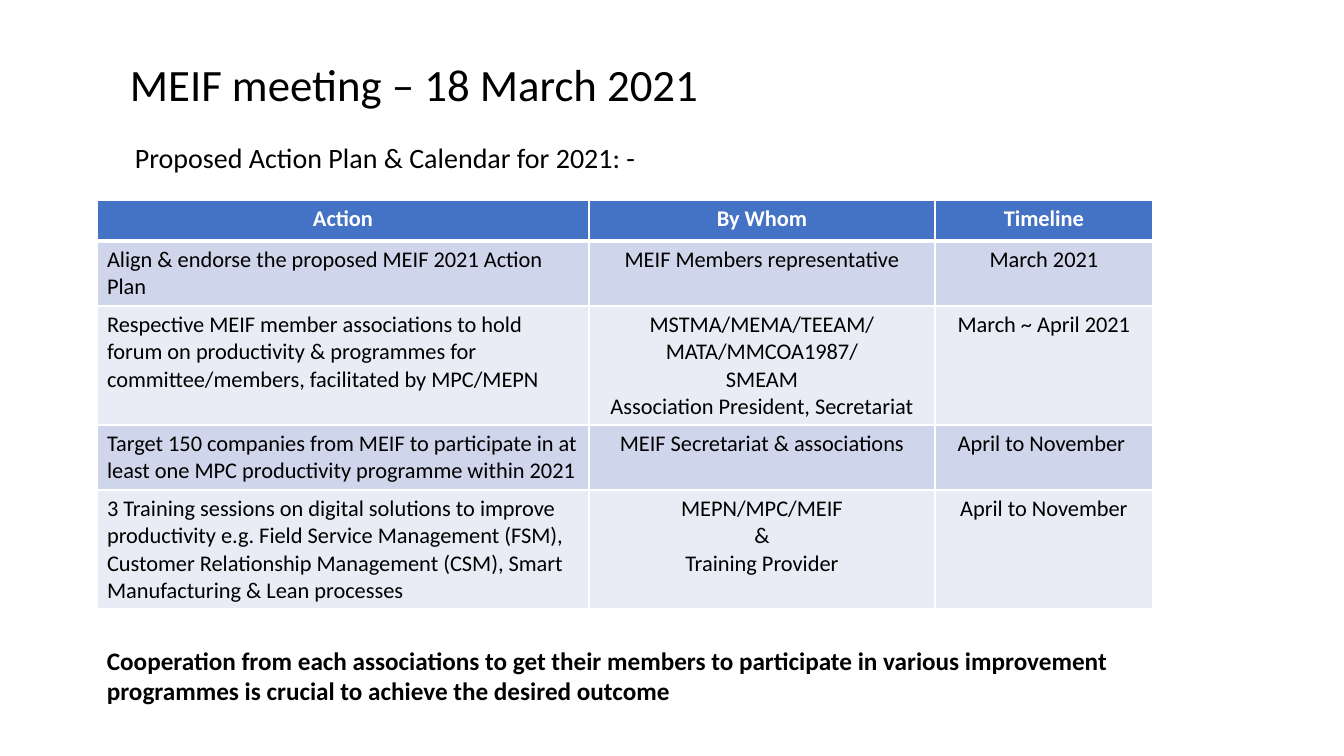
from lxml.etree import SubElement as Sub
from pptx import Presentation
from pptx.dml.color import RGBColor
from pptx.enum.text import MSO_ANCHOR as Anchor, PP_ALIGN as Align
from pptx.oxml.ns import qn
from pptx.util import Pt

TITLE = "MEIF meeting – 18 March 2021"
INTRO = "Proposed Action Plan & Calendar for 2021: -"
CLOSE = ("Cooperation from each associations to get their members to participate "
         "in various improvement programmes is crucial to achieve the desired outcome")
ROWS = [
    ("Action", "By Whom", "Timeline"),
    ("Align & endorse the proposed MEIF 2021 Action Plan",
     "MEIF Members representative", "March 2021"),
    ("Respective MEIF member associations to hold forum on productivity & "
     "programmes for committee/members, facilitated by MPC/MEPN",
     "MSTMA/MEMA/TEEAM/\nMATA/MMCOA1987/\nSMEAM\nAssociation President, Secretariat",
     "March ~ April 2021"),
    ("Target 150 companies from MEIF to participate in at least one MPC "
     "productivity programme within 2021",
     "MEIF Secretariat & associations", "April to November "),
    ("3 Training sessions on digital solutions to improve productivity e.g. "
     "Field Service Management (FSM), Customer Relationship Management (CSM), "
     "Smart Manufacturing & Lean processes",
     "MEPN/MPC/MEIF\n&\nTraining Provider", "April to November"),
]
WIDTHS = [492, 346, 218]
HEIGHTS = [41, 65, 119, 65, 119]
LEFT, TOP = 97, 200
BLACK, WHITE, HEAD = "000000", "FFFFFF", "4472C4"
BANDS = ["E9EBF5", "CFD5EA"]
BOXES = [
    (TITLE, (120, 51, 1008, 65), Anchor.BOTTOM, {"size": Pt(32)}, {"line_spacing": 0.9}),
    (INTRO, (125, 139, 1113, 579), Anchor.TOP, {"size": Pt(20)},
     {"line_spacing": 0.9, "space_before": Pt(10)}),
    (CLOSE, (LEFT, 640, sum(WIDTHS), 72), Anchor.TOP, {"size": Pt(18), "bold": True}, {}),
]


def px(n):
    return round(n * 914400 / 100.8)


def color(code):
    return RGBColor.from_string(code)


def assign(item, values):
    for key, value in values.items():
        setattr(item, key, value)


def write(frame, text, font, para, shade=BLACK):
    frame.text = text
    for line in frame.paragraphs:
        assign(line, para)
        for run in line.runs:
            assign(run.font, {"name": "Calibri", **font})
            run.font.color.rgb = color(shade)


def border(cell, base):
    props = cell._tc.get_or_add_tcPr()
    for side, size in (("L", 1), ("R", 1), ("T", 1), ("B", base)):
        line = Sub(props, qn(f"a:ln{side}"), w=str(Pt(size)))
        Sub(Sub(line, qn("a:solidFill")), qn("a:srgbClr"), val=WHITE)


deck = Presentation()
assign(deck, {"slide_width": px(1344), "slide_height": px(756)})
slide = deck.slides.add_slide(deck.slide_layouts[6])

for text, place, anchor, font, para in BOXES:
    frame = slide.shapes.add_textbox(*map(px, place)).text_frame
    assign(frame, {"word_wrap": True, "vertical_anchor": anchor})
    write(frame, text, font, para)

place = (LEFT, TOP, sum(WIDTHS), sum(HEIGHTS))
table = slide.shapes.add_table(len(ROWS), len(WIDTHS), *map(px, place)).table
for col, width in zip(table.columns, WIDTHS):
    col.width = px(width)
for row, height in zip(table.rows, HEIGHTS):
    row.height = px(height)

for r, row in enumerate(ROWS):
    top = r == 0
    for c, text in enumerate(row):
        cell = table.cell(r, c)
        border(cell, 3 if top else 1)
        cell.fill.solid()
        cell.fill.fore_color.rgb = color(HEAD if top else BANDS[r % 2])
        align = Align.CENTER if top or c else Align.LEFT
        write(cell.text_frame, text, {"size": Pt(16), "bold": top},
              {"alignment": align}, WHITE if top else BLACK)

deck.save("out.pptx")
